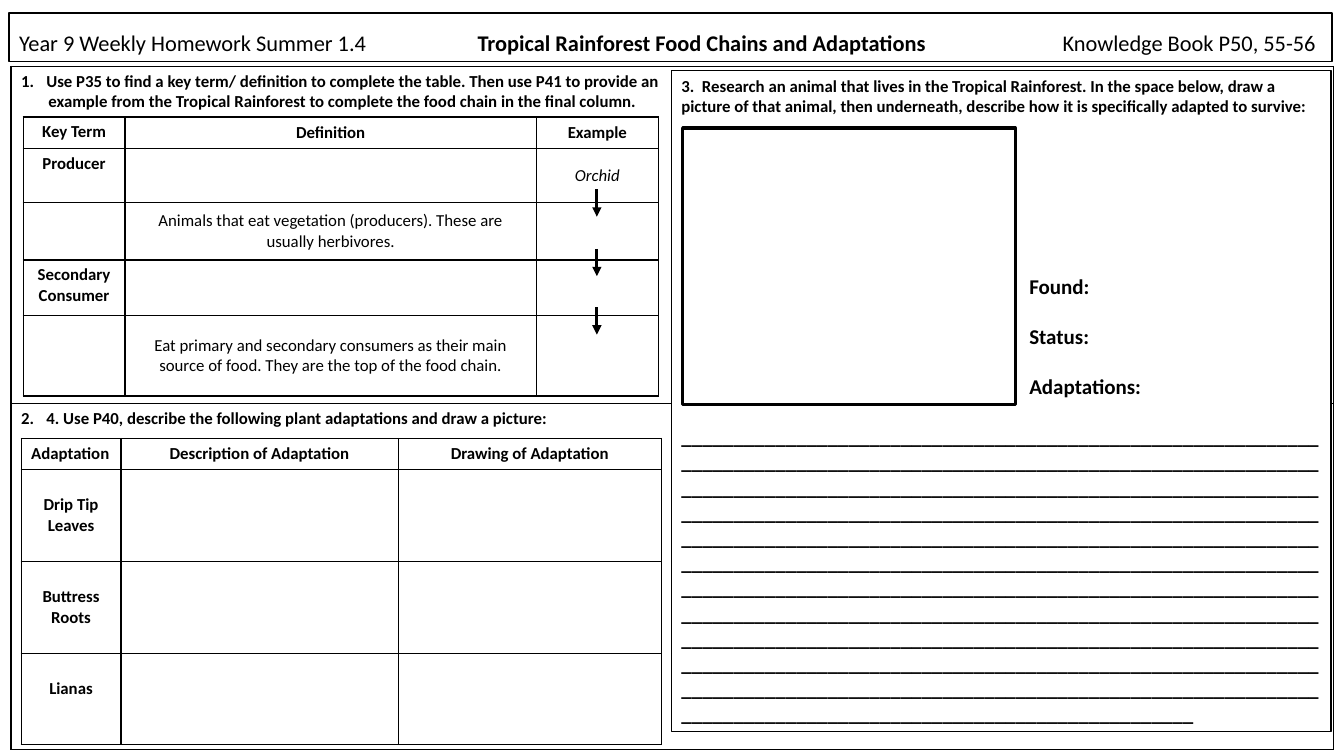
from lxml import etree
from pptx import Presentation
from pptx.dml.color import RGBColor
from pptx.enum.shapes import MSO_CONNECTOR, MSO_SHAPE
from pptx.enum.text import MSO_ANCHOR, MSO_AUTO_SIZE, PP_ALIGN
from pptx.oxml.ns import qn
from pptx.util import Inches, Pt

COLORS = {"ink": "000000", "paper": "FFFFFF"}
INK = RGBColor.from_string(COLORS["ink"])
PAPER = RGBColor.from_string(COLORS["paper"])


def style_text(paragraph, size, bold=True, align=PP_ALIGN.LEFT):
    paragraph.alignment = align
    font = paragraph.font
    font.name, font.size, font.bold = "Calibri", Pt(size), bold
    font.color.rgb = INK


def add_grid(left, top, column_widths, row_heights, filled=True):
    """Add a table with 1 pt black borders and 12 pt bold centred text."""
    table = slide.shapes.add_table(
        len(row_heights), len(column_widths), Inches(left), Inches(top),
        Inches(sum(column_widths)), Inches(sum(row_heights))).table
    for column, width in zip(table.columns, column_widths):
        column.width = Inches(width)
    for row, height in zip(table.rows, row_heights):
        row.height = Inches(height)
    for cell in table.iter_cells():
        properties = cell._tc.get_or_add_tcPr()
        for side in ("a:lnL", "a:lnR", "a:lnT", "a:lnB"):
            border = etree.SubElement(properties, qn(side), w=str(Pt(1)))
            solid = etree.SubElement(border, qn("a:solidFill"))
            etree.SubElement(solid, qn("a:srgbClr"), val=COLORS["ink"])
        if filled:
            cell.fill.solid()
            cell.fill.fore_color.rgb = PAPER
        else:
            cell.fill.background()
        style_text(cell.text_frame.paragraphs[0], 12, align=PP_ALIGN.CENTER)
    return table


presentation = Presentation()
presentation.slide_width, presentation.slide_height = Inches(13.33), Inches(7.5)
slide = presentation.slides.add_slide(presentation.slide_layouts[5])

# Title bar: left, centred and right parts set by tab stops
title = slide.shapes.title
title.left, title.top = Inches(0.09), Inches(0.13)
title.width, title.height = Inches(13.12), Inches(0.48)
title.fill.solid()
title.fill.fore_color.rgb = PAPER
title.line.color.rgb = INK
title.line.width = Pt(1)
title.text_frame.auto_size = MSO_AUTO_SIZE.NONE
title.text_frame.vertical_anchor = MSO_ANCHOR.BOTTOM
heading = title.text_frame.paragraphs[0]
style_text(heading, 16, bold=False)
heading.line_spacing = 0.9
for text, bold in (("Year 9 Weekly Homework Summer 1.4\t", False),
                   ("Tropical Rainforest Food Chains and Adaptations", True),
                   ("\tKnowledge Book P50, 55-56", False)):
    run = heading.add_run()
    run.text = text
    run.font.bold = bold
tab_list = etree.Element(qn("a:tabLst"))
for position, kind in ((6.77, "ctr"), (12.86, "r")):
    etree.SubElement(tab_list, qn("a:tab"), pos=str(Inches(position)), algn=kind)
heading._p.pPr.find(qn("a:defRPr")).addprevious(tab_list)

# Page frame with the numbered tasks 1 and 2
frame = add_grid(0.11, 0.66, [13.12], [3.34, 3.44], filled=False)
tasks = (
    ("Use P35 to find a key term/ definition to complete the table. Then use P41 to provide an",
     "example from the Tropical Rainforest to complete the food chain in the final column."),
    ("4. Use P40, describe the following plant adaptations and draw a picture:",),
)
for number, lines in enumerate(tasks, 1):
    text_frame = frame.cell(number - 1, 0).text_frame
    text_frame.text = "\n".join(lines)
    for index, paragraph in enumerate(text_frame.paragraphs):
        style_text(paragraph, 12)
        properties = paragraph._p.get_or_add_pPr()
        properties.set("marL", str(Inches(0.27 if index else 0.25)))
        if index == 0:
            properties.set("indent", str(Inches(-0.25)))
            bullet = etree.Element(qn("a:buAutoNum"), type="arabicPeriod", startAt=str(number))
            properties.find(qn("a:defRPr")).addprevious(bullet)

# Task 2: plant adaptations
adaptations = add_grid(0.21, 4.35, [0.99, 2.75, 2.61], [0.31] + [0.91] * 3)
for column, text in enumerate(("Adaptation", "Description of Adaptation", "Drawing of Adaptation")):
    adaptations.cell(0, column).text_frame.paragraphs[0].add_run().text = text
adaptations.cell(0, 0).text_frame.paragraphs[0].alignment = PP_ALIGN.LEFT
for row, plant in enumerate(("Drip Tip Leaves", "Buttress Roots", "Lianas"), 1):
    cell = adaptations.cell(row, 0)
    cell.margin_top = Inches(0.25)
    cell.text_frame.paragraphs[0].add_run().text = plant

# Task 1: food chain
food_chain = add_grid(0.23, 1.16, [1.01, 4.08, 1.21], [0.31, 0.54, 0.57, 0.55, 0.8])
food_chain_rows = (
    ("Key Term", "Definition", "Example"),
    ("Producer", "", "Orchid"),
    ("", "Animals that eat vegetation (producers). These are usually herbivores.", ""),
    ("Secondary Consumer", "", ""),
    ("", "Eat primary and secondary consumers as their main source of food. "
         "They are the top of the food chain.", ""),
)
for row, texts in enumerate(food_chain_rows):
    for column, text in enumerate(texts):
        cell = food_chain.cell(row, column)
        paragraph = cell.text_frame.paragraphs[0]
        if text:
            paragraph.add_run().text = text
        if column:
            cell.vertical_anchor = MSO_ANCHOR.MIDDLE
            paragraph.font.bold = row == 0
            paragraph.font.italic = text == "Orchid"

for top in (1.88, 2.47, 3.05):
    arrow = slide.shapes.add_connector(
        MSO_CONNECTOR.STRAIGHT, Inches(5.92), Inches(top), Inches(5.92), Inches(top + 0.27))
    arrow.line.color.rgb = INK
    arrow.line.width = Pt(2.25)
    etree.SubElement(arrow.line._get_or_add_ln(), qn("a:tailEnd"), type="triangle")
    etree.SubElement(arrow._element.spPr, qn("a:effectLst"))

# Task 3: research panel and drawing space
panels = []
for left, top, width, height, weight in ((6.66, 0.7, 6.54, 6.56, 1), (6.77, 1.27, 3.3, 2.74, 2.25)):
    panel = slide.shapes.add_shape(
        MSO_SHAPE.RECTANGLE, Inches(left), Inches(top), Inches(width), Inches(height))
    panel.shadow.inherit = False
    panel.fill.solid()
    panel.fill.fore_color.rgb = PAPER
    panel.line.color.rgb = INK
    panel.line.width = Pt(weight)
    panels.append(panel)

research = panels[0].text_frame
research.word_wrap = True
research.vertical_anchor = MSO_ANCHOR.TOP
research.text = (
    "3.  Research an animal that lives in the Tropical Rainforest. In the space below, draw a "
    "picture of that animal, then underneath, describe how it is specifically adapted to survive:")
style_text(research.paragraphs[0], 12)
answer_lines = research.add_paragraph()
answer_lines.text = "_" * 720
style_text(answer_lines, 15)
answer_lines.space_before = Pt(220)

facts = slide.shapes.add_textbox(Inches(10.11), Inches(2.66), Inches(2.92), Inches(1.36)).text_frame
facts.word_wrap = True
facts.text = "Found:\nStatus:\nAdaptations:"
for index, paragraph in enumerate(facts.paragraphs):
    style_text(paragraph, 15)
    paragraph.space_before = Pt(18 if index else 0)

presentation.save("out.pptx")
